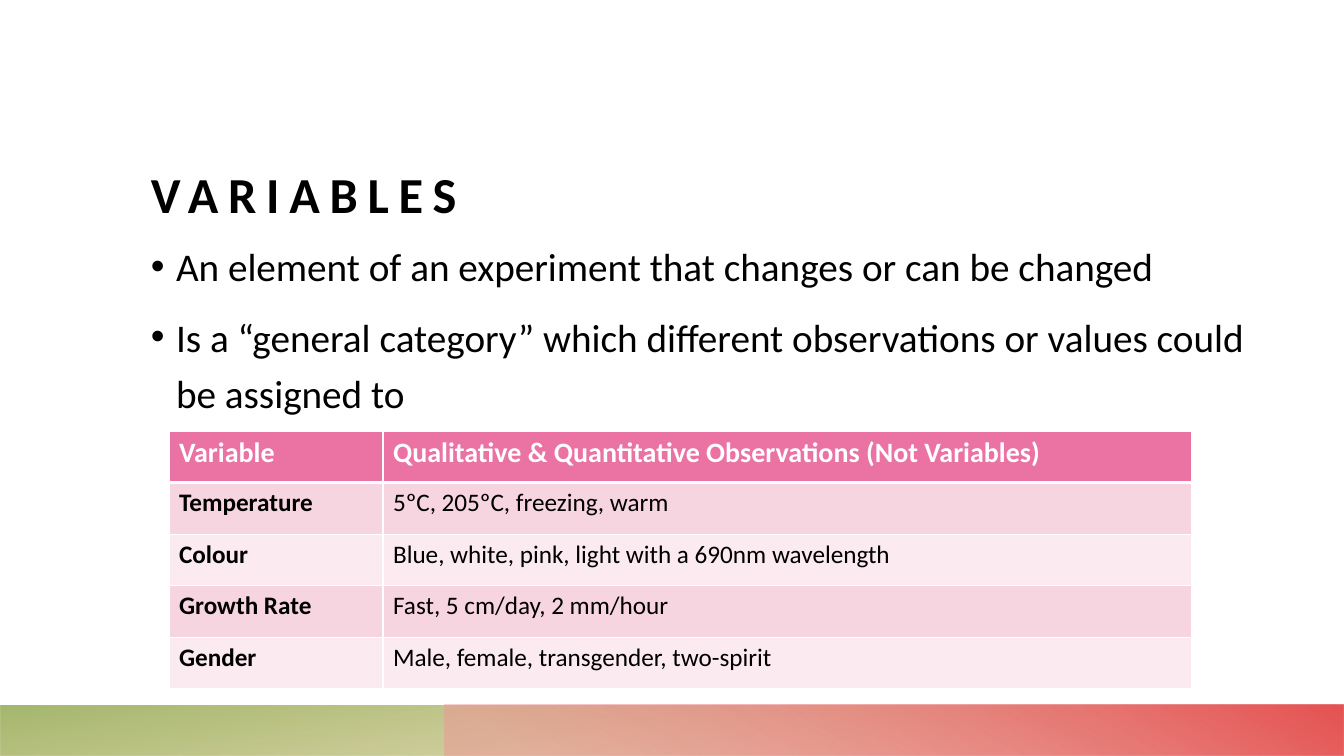
from dataclasses import dataclass

from lxml.etree import SubElement
from pptx import Presentation
from pptx.dml.color import RGBColor
from pptx.enum.shapes import MSO_SHAPE
from pptx.enum.text import MSO_ANCHOR, MSO_AUTO_SIZE, PP_ALIGN
from pptx.oxml import parse_xml
from pptx.oxml.ns import nsdecls, qn
from pptx.slide import Slide
from pptx.table import _Cell
from pptx.text.text import TextFrame, _Paragraph
from pptx.util import Emu, Pt

FONT = "Calibri"
TITLE_ONLY = 5
COLORS = {
    "text": "000000",
    "white": "FFFFFF",
    "header": "EA73A4",
    "row_dark": "F7D5E0",
    "row_light": "FBEBF0",
    "olive": "B6A343",
    "green": "95AB54",
    "rose": "EF9898",
    "red": "E55454",
}
BULLETS = (
    "An element of an experiment that changes or can be changed",
    "Is a “general category” which different observations or values could be assigned to",
)
TABLE_ROWS = (
    ("Variable", "Qualitative & Quantitative Observations (Not Variables)"),
    ("Temperature", "5ºC, 205ºC, freezing, warm"),
    ("Colour", "Blue, white, pink, light with a 690nm wavelength"),
    ("Growth Rate", "Fast, 5 cm/day, 2 mm/hour"),
    ("Gender", "Male, female, transgender, two-spirit"),
)
COLUMN_WIDTHS = (214, 809)


@dataclass(frozen=True)
class Stop:
    position: int
    color: str
    opacity: int


@dataclass(frozen=True)
class Band:
    left: int
    width: int
    rotation: int
    angle: int
    stops: tuple[Stop, Stop]


BANDS = (
    Band(0, 1344, 180, 100, (Stop(14, "olive", 28), Stop(100, "green", 85))),
    Band(445, 899, 0, 240, (Stop(9, "rose", 55), Stop(99, "red", 100))),
)


def px(value: int) -> Emu:
    """Turn pixels into EMU."""
    return Emu(round(value * 914400 / 100.8))


def rgb(name: str) -> RGBColor:
    """Look up a named colour."""
    return RGBColor.from_string(COLORS[name])


def style_paragraph(paragraph: _Paragraph, size: int, color: str, bold: bool = False) -> None:
    """Set the font of a whole paragraph."""
    font = paragraph.font
    font.name, font.size, font.bold = FONT, Pt(size), bold
    font.color.rgb = rgb(color)


def clear_insets(frame: TextFrame) -> None:
    """Wrap the text in a frame of fixed size without margins."""
    frame.word_wrap = True
    frame.auto_size = MSO_AUTO_SIZE.NONE
    frame.margin_left = frame.margin_right = frame.margin_top = frame.margin_bottom = 0


def draw_band(slide: Slide, band: Band) -> None:
    """Draw one mirrored gradient band along the bottom edge."""
    shape = slide.shapes.add_shape(
        MSO_SHAPE.RECTANGLE, px(band.left), px(705), px(band.width), px(51)
    )
    shape.shadow.inherit = False
    shape.line.fill.background()
    shape.rotation = band.rotation
    properties = shape._element.spPr
    properties.find(qn("a:xfrm")).set("flipH", "1")
    shape.fill.gradient()
    shape.fill.gradient_angle = 360 - band.angle
    for gradient_stop, stop in zip(shape.fill.gradient_stops, band.stops):
        gradient_stop.position = stop.position / 100
        gradient_stop.color.rgb = rgb(stop.color)
    for color, stop in zip(properties.iter(qn("a:srgbClr")), band.stops):
        SubElement(color, qn("a:alpha")).set("val", str(stop.opacity * 1000))


def draw_title(slide: Slide) -> None:
    """Place the letter-spaced title at the bottom of its box."""
    title = slide.shapes.title
    title.left, title.top, title.width, title.height = px(151), px(88), px(1129), px(136)
    frame = title.text_frame
    frame.text = "VARIABLES"
    clear_insets(frame)
    frame.vertical_anchor = MSO_ANCHOR.BOTTOM
    paragraph = frame.paragraphs[0]
    paragraph.alignment = PP_ALIGN.LEFT
    style_paragraph(paragraph, 36, "text", bold=True)
    paragraph.runs[0]._r.get_or_add_rPr().set("spc", "700")


def draw_bullets(slide: Slide) -> None:
    """Write the bulleted definition of a variable."""
    box = slide.shapes.add_textbox(px(151), px(233), px(1129), px(436))
    frame = box.text_frame
    clear_insets(frame)
    frame.text = "\n".join(BULLETS)
    indent = px(25)
    for paragraph in frame.paragraphs:
        paragraph.line_spacing = 1.2
        paragraph.space_before = Pt(10)
        style_paragraph(paragraph, 28, "text")
        properties = paragraph._p.get_or_add_pPr()
        properties.set("marL", str(indent))
        properties.set("indent", str(-indent))
        bullet_font = parse_xml(f'<a:buFont {nsdecls("a")} typeface="Arial"/>')
        bullet = parse_xml(f'<a:buChar {nsdecls("a")} char="•"/>')
        default_font = properties.find(qn("a:defRPr"))
        default_font.addprevious(bullet_font)
        default_font.addprevious(bullet)


def set_borders(cell: _Cell, top: int, bottom: int) -> None:
    """Give a cell white borders, with side borders of one point."""
    widths = {"lnL": 1, "lnR": 1, "lnT": top, "lnB": bottom}
    properties = cell._tc.get_or_add_tcPr()
    for index, (side, width) in enumerate(widths.items()):
        border = parse_xml(
            f'<a:{side} {nsdecls("a")} w="{Pt(width)}"><a:solidFill>'
            f'<a:srgbClr val="{COLORS["white"]}"/></a:solidFill></a:{side}>'
        )
        properties.insert(index, border)


def draw_table(slide: Slide) -> None:
    """Draw the table of variables and their observations."""
    table = slide.shapes.add_table(
        len(TABLE_ROWS), len(COLUMN_WIDTHS), px(169), px(431), px(sum(COLUMN_WIDTHS)), px(258)
    ).table
    for column, width in zip(table.columns, COLUMN_WIDTHS):
        column.width = px(width)
    for row, texts in enumerate(TABLE_ROWS):
        is_header = row == 0
        fill = "header" if is_header else ("row_light", "row_dark")[row % 2]
        for column, text in enumerate(texts):
            cell = table.cell(row, column)
            cell.text = text
            cell.fill.solid()
            cell.fill.fore_color.rgb = rgb(fill)
            style_paragraph(
                cell.text_frame.paragraphs[0],
                20 if is_header else 18,
                "white" if is_header else "text",
                bold=is_header or column == 0,
            )
            set_borders(cell, top=3 if row == 1 else 1, bottom=3 if is_header else 1)


def main() -> None:
    """Build the slide and save it."""
    presentation = Presentation()
    presentation.slide_width, presentation.slide_height = px(1344), px(756)
    slide = presentation.slides.add_slide(presentation.slide_layouts[TITLE_ONLY])
    for band in BANDS:
        draw_band(slide, band)
    draw_title(slide)
    draw_bullets(slide)
    draw_table(slide)
    presentation.save("out.pptx")


if __name__ == "__main__":
    main()
